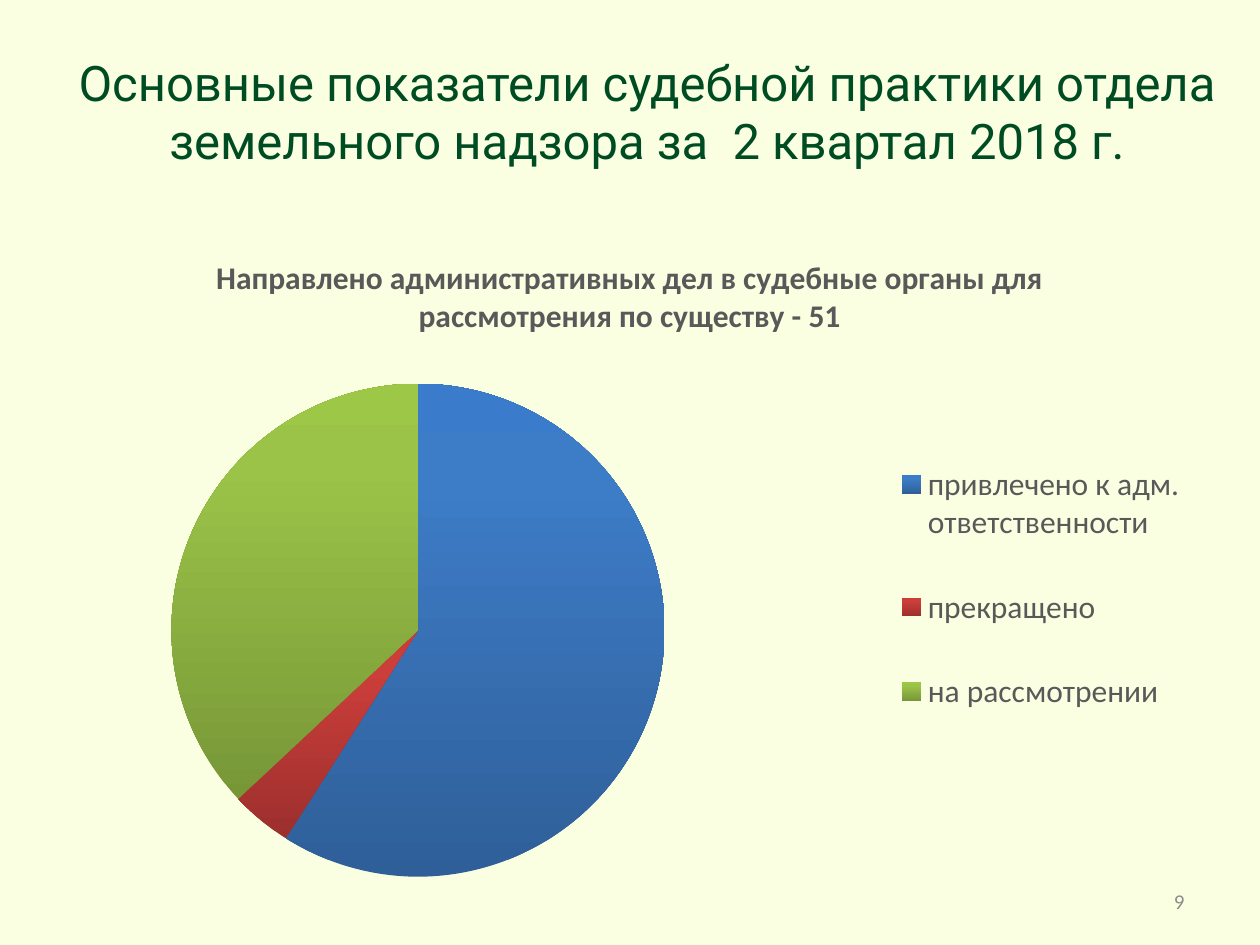
from dataclasses import dataclass

from lxml.etree import SubElement
from pptx import Presentation
from pptx.chart.chart import Chart
from pptx.chart.data import CategoryChartData
from pptx.dml.color import RGBColor
from pptx.enum.chart import XL_CHART_TYPE as ChartType, XL_LEGEND_POSITION as LegendPosition
from pptx.enum.text import MSO_ANCHOR as Anchor, PP_ALIGN as Align
from pptx.oxml import parse_xml
from pptx.oxml.ns import nsdecls, qn
from pptx.slide import Slide
from pptx.util import Inches, Pt

SLIDE_W, SLIDE_H = Inches(10), Inches(7.5)
CREAM = RGBColor(0xFA, 0xFF, 0xE1)
DARK_GREEN = RGBColor(0x00, 0x4C, 0x22)
PAGE_GREY = RGBColor(0x8C, 0x8C, 0x8C)
CHART_GREY = RGBColor(0x59, 0x59, 0x59)
BLACK = RGBColor(0, 0, 0)
STOPS = (0, 80, 100)  # gradient positions, percent


@dataclass(frozen=True)
class Box:
    """A place given in inches."""
    left: float
    top: float
    width: float
    height: float

    def lengths(self) -> list[int]:
        return [Inches(v) for v in (self.left, self.top, self.width, self.height)]


@dataclass(frozen=True)
class Label:
    text: str
    box: Box
    size: int
    face: str
    color: RGBColor
    align: Align


@dataclass(frozen=True)
class Outcome:
    name: str
    percent: int
    shades: tuple[RGBColor, RGBColor, RGBColor]  # bottom to top


def shades(*codes: str) -> tuple[RGBColor, ...]:
    return tuple(RGBColor.from_string(code) for code in codes)


LABELS = (
    Label("9", Box(7.17, 6.95, 2.33, 0.4), 12, "Calibri", PAGE_GREY, Align.RIGHT),
    Label("Основные показатели судебной практики отдела земельного надзора за  2 квартал 2018 г.",
          Box(0.37, 0.29, 9.53, 1.18), 28, "Roboto", DARK_GREEN, Align.CENTER),
)
OUTCOMES = (
    Outcome("привлечено к адм. ответственности", 59, shades("2F5F99", "3D7CC7", "3A7CCB")),
    Outcome("прекращено", 4, shades("9C2F2D", "CB3E3A", "CE3B37")),
    Outcome("на рассмотрении", 37, shades("779737", "9BC348", "9DC746")),
)
CHART_BOX = Box(0.12, 1.76, 9.69, 5.59)
CHART_TITLE = "Направлено административных дел в судебные органы для рассмотрения по существу - 51"


def style_font(font, size: int, color: RGBColor, face: str = "Calibri", bold: bool = False) -> None:
    font.size, font.name, font.bold = Pt(size), face, bold
    font.color.rgb = color


def add_label(slide: Slide, label: Label) -> None:
    frame = slide.shapes.add_textbox(*label.box.lengths()).text_frame
    frame.word_wrap = True
    frame.vertical_anchor = Anchor.MIDDLE
    paragraph = frame.paragraphs[0]
    paragraph.alignment = label.align
    run = paragraph.add_run()
    run.text = label.text
    style_font(run.font, label.size, label.color, label.face)


def place(part, before: tuple[str, ...], inner: bool = False, **shares: float) -> None:
    """Give a chart part a manual layout, in shares of the chart's size."""
    for old in part.findall(qn("c:layout")):
        part.remove(old)
    layout = parse_xml(f"<c:layout {nsdecls('c')}><c:manualLayout/></c:layout>")
    manual = layout[0]
    if inner:
        SubElement(manual, qn("c:layoutTarget")).set("val", "inner")
    for axis in ("x", "y"):
        SubElement(manual, qn(f"c:{axis}Mode")).set("val", "edge")
    for key, share in shares.items():
        SubElement(manual, qn(f"c:{key}")).set("val", str(share))
    # The layout follows the parts that the schema puts ahead of it
    ahead = sum(child.tag in [qn(name) for name in before] for child in part)
    part.insert(ahead, layout)


def fill_slice(point, colors: tuple[RGBColor, ...]) -> None:
    stops = "".join(f'<a:gs pos="{pos * 1000}"><a:srgbClr val="{color}"/></a:gs>'
                    for pos, color in zip(STOPS, colors))
    gradient = parse_xml(f'<a:gradFill {nsdecls("a")} rotWithShape="1"><a:gsLst>{stops}</a:gsLst>'
                         '<a:lin ang="16200000" scaled="0"/></a:gradFill>')
    point.format.line.fill.background()
    point.format.fill.background()
    properties = point.format.fill._xPr
    properties.replace(properties.find(qn("a:noFill")), gradient)


def add_outcome_pie(slide: Slide) -> Chart:
    data = CategoryChartData()
    data.categories = [outcome.name for outcome in OUTCOMES]
    data.add_series("Series 1", [outcome.percent for outcome in OUTCOMES])
    chart = slide.shapes.add_chart(ChartType.PIE, *CHART_BOX.lengths(), data).chart
    style_font(chart.font, 10, BLACK)

    # Title above the pie
    chart.has_title = True
    heading = chart.chart_title.text_frame.paragraphs[0].add_run()
    heading.text = CHART_TITLE
    style_font(heading.font, 18, CHART_GREY, bold=True)
    place(chart.chart_title._element, ("c:tx",), x=0.16, y=0.04)

    # Legend to the right
    chart.has_legend = True
    chart.legend.position = LegendPosition.RIGHT
    chart.legend.include_in_layout = False
    style_font(chart.legend.font, 18, CHART_GREY)
    place(chart.legend._element, ("c:legendPos", "c:legendEntry"), x=0.7, y=0.28, w=0.28, h=0.48)

    # Pie area and slices
    place(chart._chartSpace.chart.plotArea, (), inner=True, x=0.02, y=0.23, w=0.62, h=0.7)
    plot = chart.plots[0]
    plot.vary_by_categories = True
    for index, outcome in enumerate(OUTCOMES):
        fill_slice(plot.series[0].points[index], outcome.shades)
    return chart


def main() -> None:
    deck = Presentation()
    deck.slide_width, deck.slide_height = SLIDE_W, SLIDE_H
    slide = deck.slides.add_slide(deck.slide_layouts[6])
    background = slide.background.fill
    background.solid()
    background.fore_color.rgb = CREAM

    page_number, headline = LABELS
    add_label(slide, page_number)
    add_outcome_pie(slide)
    add_label(slide, headline)
    deck.save("out.pptx")


if __name__ == "__main__":
    main()
